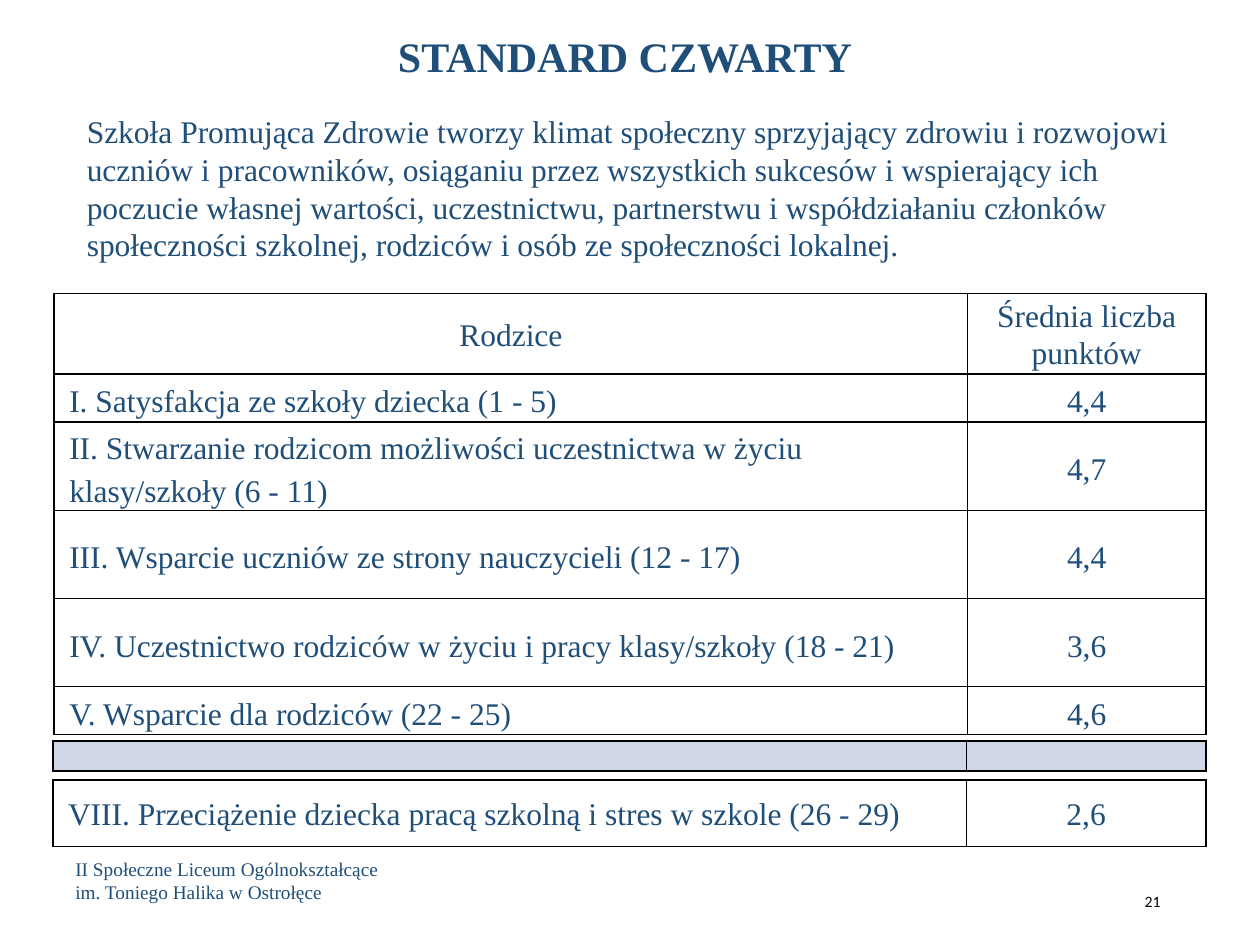
import pptx
import pptx.dml.color
import pptx.enum.text
import pptx.oxml
import pptx.oxml.ns
import pptx.util
from lxml import etree

Inches = pptx.util.Inches
Pt = pptx.util.Pt
ALIGN = pptx.enum.text.PP_ALIGN
MIDDLE = pptx.enum.text.MSO_ANCHOR.MIDDLE
TOP = pptx.enum.text.MSO_ANCHOR.TOP

WIDTH, HEIGHT = 10, 7.5
NAVY, BLACK, STRIP = "1F4E79", "000000", "D0D7E7"
SERIF = "Times New Roman"
COLUMNS = (7.25, 1.9)
TABLE_LEFT = 0.42

HEADER = ("Rodzice", "Średnia liczba punktów")
RESULTS = [
    ("I. Satysfakcja ze szkoły dziecka (1 - 5)", "4,4"),
    ("II. Stwarzanie rodzicom możliwości uczestnictwa w życiu klasy/szkoły (6 - 11)", "4,7"),
    ("III. Wsparcie uczniów ze strony nauczycieli (12 - 17)", "4,4"),
    ("IV. Uczestnictwo rodziców w życiu i pracy klasy/szkoły (18 - 21)", "3,6"),
    ("V. Wsparcie dla rodziców (22 - 25)", "4,6"),
]
OVERLOAD = ("VIII. Przeciążenie dziecka pracą szkolną i stres w szkole (26 - 29)", "2,6")
STANDARD = (
    "Szkoła Promująca Zdrowie tworzy klimat społeczny sprzyjający zdrowiu i rozwojowi "
    "uczniów i pracowników, osiąganiu przez wszystkich sukcesów i wspierający ich "
    "poczucie własnej wartości, uczestnictwu, partnerstwu i współdziałaniu członków "
    "społeczności szkolnej, rodziców i osób ze społeczności lokalnej."
)


def color(value):
    return pptx.dml.color.RGBColor.from_string(value)


def write(frame, text, size=18, font=SERIF, fill=NAVY, bold=False,
          align=ALIGN.LEFT, spacing=None):
    """Put one formatted paragraph into a text frame."""
    para = frame.paragraphs[0]
    para.alignment = align
    if spacing:
        para.line_spacing = spacing
    span = para.add_run()
    span.text = text
    span.font.size = Pt(size)
    span.font.name = font
    span.font.bold = bold
    span.font.color.rgb = color(fill)


def place(shape, left, top, width, height):
    shape.left, shape.top = Inches(left), Inches(top)
    shape.width, shape.height = Inches(width), Inches(height)


def add_text(page, area, text, anchor=MIDDLE, **style):
    box = page.shapes.add_textbox(*map(Inches, area))
    box.text_frame.word_wrap = True
    box.text_frame.vertical_anchor = anchor
    write(box.text_frame, text, **style)


def outline(cell):
    """Draw a one-point black line on all four sides of a cell."""
    properties = cell._tc.get_or_add_tcPr()
    for side in ("lnL", "lnR", "lnT", "lnB"):
        line = etree.SubElement(properties, pptx.oxml.ns.qn("a:" + side), w=str(Pt(1)))
        solid = etree.SubElement(line, pptx.oxml.ns.qn("a:solidFill"))
        etree.SubElement(solid, pptx.oxml.ns.qn("a:srgbClr"), val=BLACK)


def shrink_empty(cell, size):
    """Keep an empty cell from growing to the default text height."""
    para = cell.text_frame.paragraphs[0]._p
    etree.SubElement(para, pptx.oxml.ns.qn("a:endParaRPr"), sz=str(size * 100))


def add_grid(page, top, rows, heights, spacings, left=TABLE_LEFT, columns=COLUMNS,
             header=False, fill=None):
    frame = page.shapes.add_table(len(rows), len(columns), Inches(left), Inches(top),
                                  Inches(sum(columns)), Inches(sum(heights)))
    table = frame.table
    table.first_row = table.horz_banding = False
    for column, width in zip(table.columns, columns):
        column.width = Inches(width)
    for r, (texts, height) in enumerate(zip(rows, heights)):
        table.rows[r].height = Inches(height)
        for c, text in enumerate(texts):
            cell = table.cell(r, c)
            label = c == 0 and not (header and r == 0)
            cell.margin_left = Inches(0.12 if label else 0)
            cell.margin_right = cell.margin_top = cell.margin_bottom = 0
            cell.vertical_anchor = MIDDLE
            outline(cell)
            if fill:
                cell.fill.solid()
                cell.fill.fore_color.rgb = color(fill)
            else:
                cell.fill.background()
            if text:
                write(cell.text_frame, text, spacing=Pt(spacings[r]),
                      align=ALIGN.LEFT if label else ALIGN.CENTER)
            else:
                shrink_empty(cell, 8)


def main():
    deck = pptx.Presentation()
    deck.slide_width, deck.slide_height = Inches(WIDTH), Inches(HEIGHT)
    page = deck.slides.add_slide(deck.slide_layouts[5])

    # Title and description of the standard
    title = page.shapes.title
    place(title, 1.73, 0.07, 6.46, 0.79)
    title.text_frame.vertical_anchor = MIDDLE
    write(title.text_frame, "STANDARD CZWARTY", size=24, bold=True,
          align=ALIGN.CENTER, spacing=0.9)
    add_text(page, (0.59, 0.84, 8.98, 1.31), STANDARD, anchor=TOP)

    # Overload score, empty strip and main results
    add_grid(page, 6.19, [OVERLOAD], [0.53], [22])
    add_grid(page, 5.88, [("", "")], [0.24], [], fill=STRIP)
    add_grid(page, 2.33, [HEADER] + RESULTS, [0.64, 0.38, 0.7, 0.7, 0.7, 0.38],
             [21.6] + [24.4] * len(RESULTS), left=0.43, columns=(7.25, 1.89), header=True)

    # Footer and page number
    add_text(page, (0.5, 6.83, 2.8, 0.31),
             "II Społeczne Liceum Ogólnokształcące im. Toniego Halika w Ostrołęce", size=11)
    add_text(page, (7.06, 6.95, 2.25, 0.4), "21", size=9, font="Calibri",
             fill=BLACK, align=ALIGN.RIGHT)

    deck.save("out.pptx")


if __name__ == "__main__":
    main()
